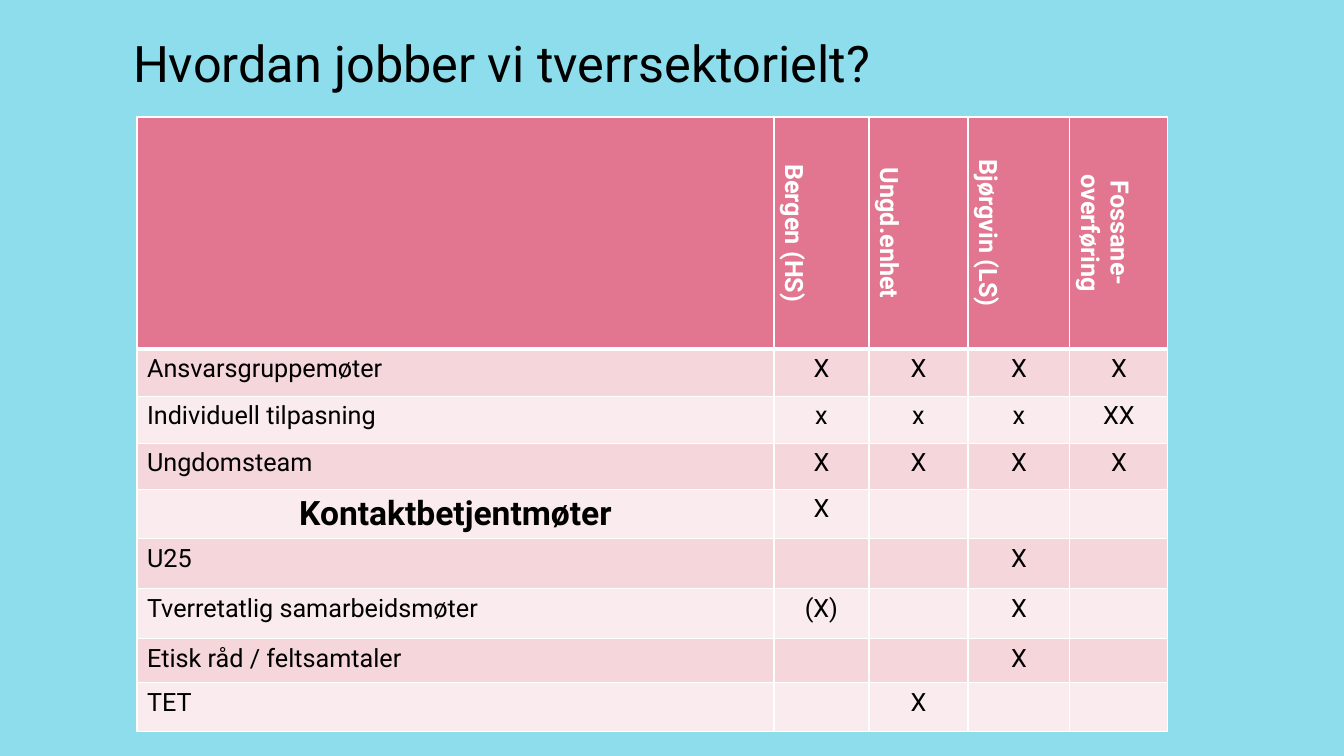
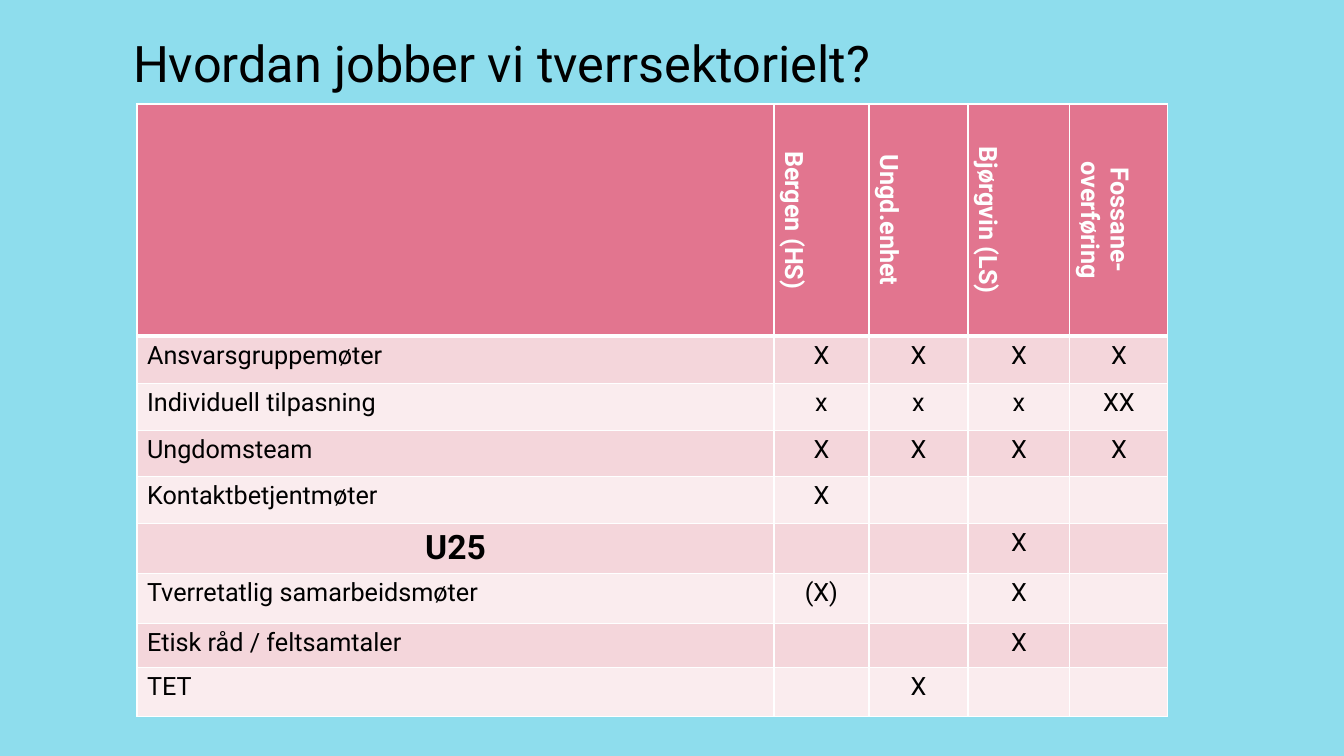
from lxml import etree
from pptx import Presentation
from pptx.dml.color import RGBColor
from pptx.enum.text import MSO_ANCHOR, MSO_AUTO_SIZE, PP_ALIGN
from pptx.oxml.ns import qn
from pptx.util import Pt

TOP = MSO_ANCHOR.TOP
FIXED = MSO_AUTO_SIZE.NONE
LEFT, CENTER = PP_ALIGN.LEFT, PP_ALIGN.CENTER

SCALE = 12192000 / 1344  # EMU per px
FONT = "Roboto"
COLORS = {
    "back": "8EDDED",
    "text": "000000",
    "line": "FEFFFF",
    "head": "E2758F",
    "odd": "F4D6DB",
    "even": "FAECEE",
}

TITLE = "Hvordan jobber vi tverrsektorielt?"
COLS = [637, 95, 99, 102, 98]
HEIGHTS = [231, 47, 47, 46, 47, 50, 50, 44, 49]
ROWS = [
    ["", "Bergen (HS)", "Ungd.enhet", "Bjørgvin (LS)", "Fossane-overføring"],
    ["Ansvarsgruppemøter", "X", "X", "X", "X"],
    ["Individuell tilpasning", "x", "x", "x", "XX"],
    ["Ungdomsteam", "X", "X", "X", "X"],
    ["Kontaktbetjentmøter", "X", "", "", ""],
    ["U25", "", "", "X", ""],
    ["Tverretatlig samarbeidsmøter", "(X)", "", "X", ""],
    ["Etisk råd / feltsamtaler", "", "", "X", ""],
    ["TET", "", "X", "", ""],
]


def px(n):
    return round(n * SCALE)


class Deck:
    def __init__(self):
        self.prs = Presentation()
        self.prs.slide_width = px(1344)
        self.prs.slide_height = px(756)
        self.slide = None
        self.paint(self.prs.slide_master.background.fill, "back")

    def paint(self, fill, color):
        fill.solid()
        fill.fore_color.rgb = RGBColor.from_string(COLORS[color])

    def style(self, para, size, color="text", bold=False, align=LEFT):
        para.alignment = align
        font = para.font
        font.name, font.size, font.bold = FONT, Pt(size), bold
        font.color.rgb = RGBColor.from_string(COLORS[color])

    def add(self, title):
        self.slide = self.prs.slides.add_slide(self.prs.slide_layouts[5])
        shape = self.slide.shapes.title
        shape.left, shape.top = px(123), px(34)
        shape.width, shape.height = px(1058), px(163)
        frame = shape.text_frame
        frame.text = title
        frame.vertical_anchor = TOP
        frame.auto_size = FIXED
        para = frame.paragraphs[0]
        para.line_spacing = 0.89
        self.style(para, 36)

    def edges(self, props, widths):
        for side, width in widths.items():
            line = etree.SubElement(props, qn("a:ln" + side), w=str(Pt(width)))
            fill = etree.SubElement(line, qn("a:solidFill"))
            etree.SubElement(fill, qn("a:srgbClr"), val=COLORS["line"])

    def cell(self, cell, text, row, col, focus):
        head = row == 0
        props = cell._tc.get_or_add_tcPr()
        # The rule under the header is thicker
        self.edges(props, {"L": 1, "R": 1, "T": 3 if row == 1 else 1,
                           "B": 3 if head else 1})
        self.paint(cell.fill, "head" if head else "odd" if row % 2 else "even")
        if head and col:
            props.set("vert", "vert")
        cell.text = text
        big = row == focus and col == 0
        self.style(cell.text_frame.paragraphs[0], 24 if big else 18,
                   "line" if head else "text", head or big,
                   CENTER if col or big else LEFT)

    def table(self, top, focus):
        frame = self.slide.shapes.add_table(
            len(ROWS), len(COLS), px(137), px(top),
            px(sum(COLS)), px(sum(HEIGHTS)))
        table = frame.table
        table.first_row = table.horz_banding = False
        for col, width in zip(table.columns, COLS):
            col.width = px(width)
        for row, height in zip(table.rows, HEIGHTS):
            row.height = px(height)
        for r, texts in enumerate(ROWS):
            for c, text in enumerate(texts):
                self.cell(table.cell(r, c), text, r, c, focus)


def main():
    deck = Deck()
    # One slide per highlighted row: table top, row number
    for top, focus in [(117, 4), (104, 5)]:
        deck.add(TITLE)
        deck.table(top, focus)
    deck.prs.save("out.pptx")


if __name__ == "__main__":
    main()
